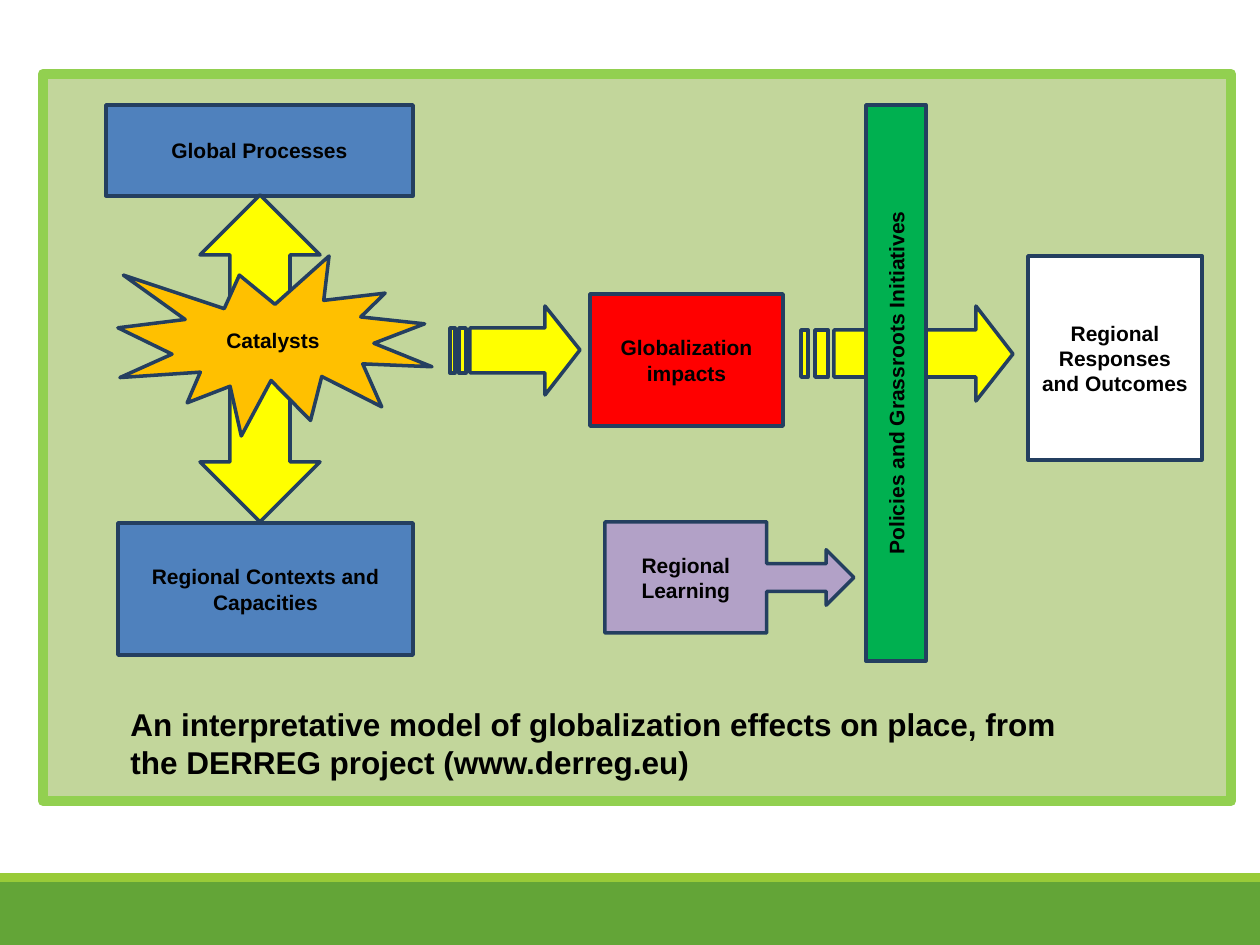
from pptx import Presentation
from pptx.dml.color import RGBColor
from pptx.enum.shapes import MSO_SHAPE
from pptx.enum.text import MSO_ANCHOR, PP_ALIGN
from pptx.util import Pt

PX = 914400 / 126
SLIDE_W, SLIDE_H = 1260, 945
OUTLINE = "243F60"
PANEL_FILL = "C2D69B"
BLUE = "4F81BD"
YELLOW = "FFFF00"


def emu(px):
    return round(px * PX)


def rgb(value):
    return RGBColor.from_string(value)


def style(sp, fill, line=OUTLINE, width=2):
    sp.shadow.inherit = False
    sp.fill.solid()
    sp.fill.fore_color.rgb = rgb(fill)
    if line:
        sp.line.color.rgb = rgb(line)
        sp.line.width = Pt(width)
    else:
        sp.line.fill.background()


def add_box(slide, kind, x, y, w, h, fill, **line):
    sp = slide.shapes.add_shape(kind, emu(x), emu(y), emu(w), emu(h))
    style(sp, fill, **line)
    return sp


def write(sp, text, size=12, align=PP_ALIGN.CENTER, anchor=MSO_ANCHOR.MIDDLE, vert=None):
    tf = sp.text_frame
    tf.word_wrap = True
    tf.vertical_anchor = anchor
    if vert:
        sp.element.txBody.bodyPr.set("vert", vert)
    p = tf.paragraphs[0]
    p.alignment = align
    r = p.add_run()
    r.text = text
    r.font.name = "Arial"
    r.font.size = Pt(size)
    r.font.bold = True
    r.font.color.rgb = rgb("000000")


def add_striped_arrow(slide, x, y, w, h, stripes, body, head):
    """Draw a right arrow with tail stripes; stripes, body and head are offsets from x."""
    top, bottom = y + h / 4, y + h * 3 / 4
    neck = x + head
    outlines = [[(neck, y), (neck, top), (x + body, top), (x + body, bottom),
                 (neck, bottom), (neck, y + h), (x + w, y + h / 2)]]
    for left, right in stripes:
        outlines.append([(x + left, top), (x + left, bottom),
                         (x + right, bottom), (x + right, top)])
    builder = slide.shapes.build_freeform(*outlines[0][0], scale=PX)
    for i, (start, *rest) in enumerate(outlines):
        if i:
            builder.move_to(*start)
        builder.add_line_segments(rest, close=True)
    style(builder.convert_to_shape(), YELLOW)


def add_footer(slide, x, y, w, h):
    strip = 9
    add_box(slide, MSO_SHAPE.RECTANGLE, x, y + strip, w, h - strip, "63A537", line=None)
    add_box(slide, MSO_SHAPE.RECTANGLE, x, y, w, strip, "99CB38", line=None)


def add_drivers(slide, x, y):
    """Global and regional drivers, joined through the catalysts."""
    rect = MSO_SHAPE.RECTANGLE
    write(add_box(slide, rect, x, y, 307, 91, BLUE), "Global Processes")
    write(add_box(slide, rect, x + 12, y + 418, 295, 132, BLUE),
          "Regional Contexts and Capacities")
    add_box(slide, MSO_SHAPE.UP_DOWN_ARROW, x + 94, y + 90, 120, 327, YELLOW)
    write(add_box(slide, MSO_SHAPE.EXPLOSION1, x + 12, y + 151, 314, 180, "FFC000"),
          "Catalysts")


def add_effects(slide, x, y):
    """Impacts passing through policies to the regional outcomes."""
    rect = MSO_SHAPE.RECTANGLE
    add_striped_arrow(slide, x, y + 201, 130, 89, [(9, 16), (0, 5)], 20, 95)
    write(add_box(slide, rect, x + 140, y + 189, 193, 132, "FF0000"),
          "Globalization impacts")
    add_striped_arrow(slide, x + 351, y + 201, 212, 95, [(14, 27), (0, 7)], 33, 175)
    write(add_box(slide, rect, x + 416, y, 60, 556, "00B050"),
          "Policies and Grassroots Initiatives", vert="vert270")
    write(add_box(slide, rect, x + 578, y + 151, 174, 204, "FFFFFF"),
          "Regional Responses and Outcomes")
    learning = add_box(slide, MSO_SHAPE.RIGHT_ARROW_CALLOUT,
                       x + 155, y + 417, 249, 111, "B2A1C7")
    write(learning, "Regional Learning")


def add_model(slide, x, y, w, h):
    add_box(slide, MSO_SHAPE.RECTANGLE, x, y, w, h, PANEL_FILL, line="92D050", width=6)
    add_drivers(slide, x + 63, y + 31)
    add_effects(slide, x + 407, y + 31)
    caption = add_box(slide, MSO_SHAPE.RECTANGLE, x + 75, y + 625, 999, 77,
                      PANEL_FILL, line=None)
    write(caption, "An interpretative model of globalization effects on place, "
          "from the DERREG project (www.derreg.eu)",
          size=18, align=PP_ALIGN.LEFT, anchor=MSO_ANCHOR.TOP)


def main():
    prs = Presentation()
    prs.slide_width, prs.slide_height = emu(SLIDE_W), emu(SLIDE_H)
    slide = prs.slides.add_slide(prs.slide_layouts[6])
    add_footer(slide, 0, 873, SLIDE_W, 72)
    add_model(slide, 43, 74, 1188, 727)
    prs.save("out.pptx")


if __name__ == "__main__":
    main()
